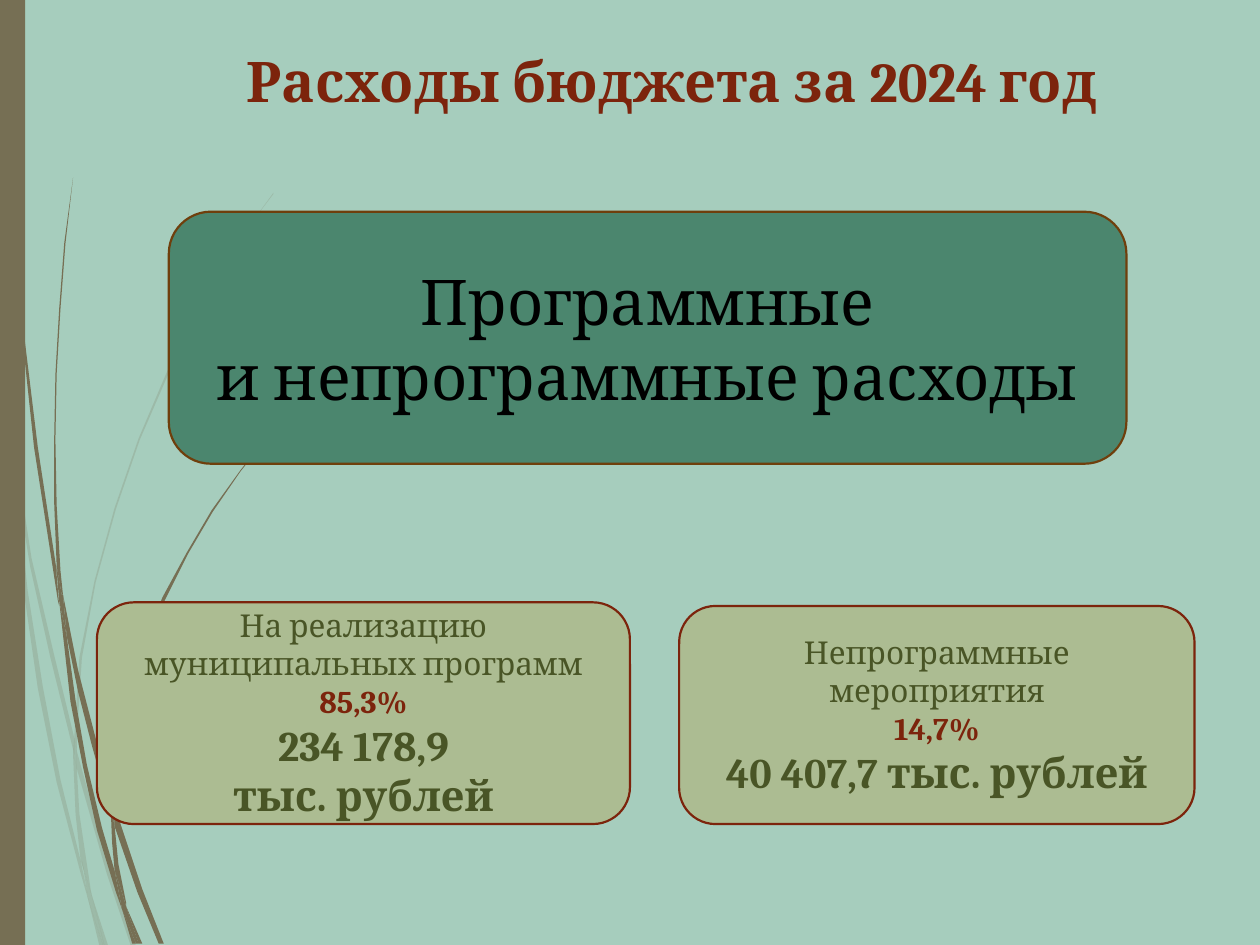
from pptx import Presentation
from pptx.dml.color import RGBColor
from pptx.enum.shapes import MSO_SHAPE
from pptx.enum.text import MSO_ANCHOR, MSO_AUTO_SIZE, PP_ALIGN
from pptx.oxml.ns import qn
from pptx.util import Pt
from lxml import etree

RECT, ROUNDED = MSO_SHAPE.RECTANGLE, MSO_SHAPE.ROUNDED_RECTANGLE
MIDDLE, CENTER, NO_FIT = MSO_ANCHOR.MIDDLE, PP_ALIGN.CENTER, MSO_AUTO_SIZE.NONE

THEME = {
    "font": "Cambria", "ground": "A6CDBD", "stem": "766F54",
    "rust": "7C240C", "olive": "495526", "black": "000000",
    "sage": "ACBC92", "green": "4B866E", "brown": "6F3F0C",
    "outline": 1.25, "faint": 20,
}
STYLES = {  # size, colour, bold
    "title": (32, "rust", True),
    "heading": (36, "black", False),
    "label": (18, "olive", False),
    "share": (18, "rust", True),
    "amount": (24, "olive", True),
}

# Content: paragraphs are lists of (text, style) runs; boxes in points
TITLE = [[("Расходы бюджета за 2024 год", "title")]]
TITLE_BOX = (108, 13, 552, 66)
CARDS = [
    {"box": (55.4, 344.2, 304.6, 126.7), "fill": "sage", "line": "rust", "text": [
        [("На реализацию муниципальных программ ", "label"), ("85,3%", "share")],
        [("234 178,9", "amount")],
        [("тыс. рублей", "amount")]]},
    {"box": (388.1, 346.3, 294.5, 124.6), "fill": "sage", "line": "rust", "text": [
        [("Непрограммные мероприятия", "label")],
        [("14,7%", "share")],
        [("40 407,7 тыс. рублей", "amount")]]},
    {"box": (96.5, 121, 547.2, 144), "fill": "green", "line": "brown", "text": [
        [("Программные", "heading")],
        [("и непрограммные расходы", "heading")]]},
]
STRIPE_BOX = (0, 0, 14.4, 540)

# Grass outlines, in units of 0.72 pt
GRASS_UNIT = Pt(0.72)
FAINT_GRASS = [
    [(8, 350), (6, 322), (0, 282), (0, 299), (7, 344)],
    [(40, 522), (59, 599), (59, 586), (43, 520), (25, 443), (10, 345),
     (12, 376), (24, 450)],
    [(64, 607), (61, 596), (61, 610), (85, 694), (104, 751), (108, 751),
     (88, 692)],
    [(83, 751), (86, 751), (73, 711)],
    [(64, 683), (48, 619), (34, 545), (22, 469), (12, 376), (8, 350),
     (19, 470), (30, 546), (45, 621), (64, 693), (70, 714), (69, 707)],
    [(58, 599), (60, 646), (64, 683), (67, 692), (73, 711), (72, 706),
     (63, 646), (61, 610), (61, 608)],
    [(61, 584), (65, 522), (76, 462), (92, 404), (111, 349), (134, 296),
     (159, 245), (187, 198), (201, 175), (217, 154), (217, 153), (201, 175),
     (186, 197), (158, 244), (133, 294), (110, 348), (91, 403), (75, 461),
     (63, 522), (59, 584), (59, 586), (61, 596)],
    [(70, 714), (79, 751), (82, 751)],
    [(61, 608), (61, 610), (61, 596), (59, 586), (58, 599)],
    [(67, 692), (65, 683), (69, 707), (70, 714), (82, 751), (83, 751),
     (73, 711)],
]
DARK_GRASS = [
    [(5, 110), (14, 233), (27, 355), (46, 477), (47, 481), (45, 457),
     (45, 453), (30, 355), (15, 232), (6, 109), (4, 48), (3, 0), (2, 0),
     (3, 48)],
    [(73, 592), (88, 645), (88, 633), (88, 631), (77, 590), (62, 532),
     (50, 472), (53, 505), (62, 549)],
    [(94, 649), (91, 641), (91, 656), (109, 708), (126, 749), (130, 749),
     (113, 706)],
    [(91, 691), (81, 657), (69, 607), (60, 556), (53, 505), (47, 477),
     (56, 557), (66, 609), (77, 659), (92, 708), (97, 722), (96, 717)],
    [(50, 472), (48, 453), (45, 401), (44, 349), (45, 297), (48, 245),
     (52, 193), (58, 141), (51, 193), (47, 245), (44, 297), (43, 349),
     (43, 399), (45, 449), (49, 472)],
    [(110, 749), (113, 749), (100, 719)],
    [(47, 477), (53, 505), (50, 472), (49, 472), (45, 449), (45, 453)],
    [(91, 633), (95, 592), (103, 552), (116, 513), (131, 476), (149, 440),
     (169, 406), (191, 374), (203, 359), (216, 344), (215, 344), (203, 358),
     (191, 373), (168, 405), (148, 439), (129, 474), (114, 511), (101, 551),
     (92, 590), (88, 631), (91, 641)],
    [(97, 722), (105, 749), (108, 749)],
    [(88, 645), (89, 669), (91, 691), (96, 706), (100, 719), (100, 716),
     (94, 686), (91, 656), (90, 651)],
    [(88, 645), (90, 651), (91, 656), (91, 641), (88, 631), (88, 633)],
    [(96, 706), (91, 691), (96, 717), (97, 722), (108, 749), (110, 749),
     (100, 719)],
]


def color(name):
    return RGBColor.from_string(THEME[name])


def paint(shape, fill, line=None):
    shape.shadow.inherit = False
    shape.fill.solid()
    shape.fill.fore_color.rgb = color(fill)
    if line:
        shape.line.color.rgb = color(line)
        shape.line.width = Pt(THEME["outline"])
    else:
        shape.line.fill.background()


def write(shape, paragraphs):
    frame = shape.text_frame
    frame_format = {"word_wrap": True, "auto_size": NO_FIT, "vertical_anchor": MIDDLE}
    for key, value in frame_format.items():
        setattr(frame, key, value)
    for index, runs in enumerate(paragraphs):
        paragraph = frame.add_paragraph() if index else frame.paragraphs[0]
        paragraph.alignment = CENTER
        for text, style in runs:
            run = paragraph.add_run()
            run.text = text
            size, tint, bold = STYLES[style]
            font_format = {"name": THEME["font"], "size": Pt(size), "bold": bold}
            for key, value in font_format.items():
                setattr(run.font, key, value)
            run.font.color.rgb = color(tint)


def add_grass(shapes, outlines, opacity=None):
    for start, *rest in outlines:
        builder = shapes.build_freeform(*start, scale=GRASS_UNIT)
        builder.add_line_segments(rest, close=True)
        blade = builder.convert_to_shape()
        paint(blade, "stem")
        if opacity:
            solid = blade.fill.fore_color.rgb and blade.element.spPr.find(qn("a:solidFill"))
            etree.SubElement(solid[0], qn("a:alpha"), val=str(opacity * 1000))


def main():
    deck = Presentation()
    deck.slide_width, deck.slide_height = Pt(720), Pt(540)
    slide = deck.slides.add_slide(deck.slide_layouts[5])
    shapes = slide.shapes
    slide.background.fill.solid()
    slide.background.fill.fore_color.rgb = color("ground")

    # Grass and side stripe
    add_grass(shapes, FAINT_GRASS, THEME["faint"])
    add_grass(shapes, DARK_GRASS)
    paint(shapes.add_shape(RECT, *map(Pt, STRIPE_BOX)), "stem")

    # Title
    title = shapes.title
    for side, value in zip(("left", "top", "width", "height"), TITLE_BOX):
        setattr(title, side, Pt(value))
    write(title, TITLE)

    # Expense cards
    for card in CARDS:
        box = shapes.add_shape(ROUNDED, *map(Pt, card["box"]))
        paint(box, card["fill"], card["line"])
        write(box, card["text"])

    deck.save("out.pptx")


if __name__ == "__main__":
    main()
